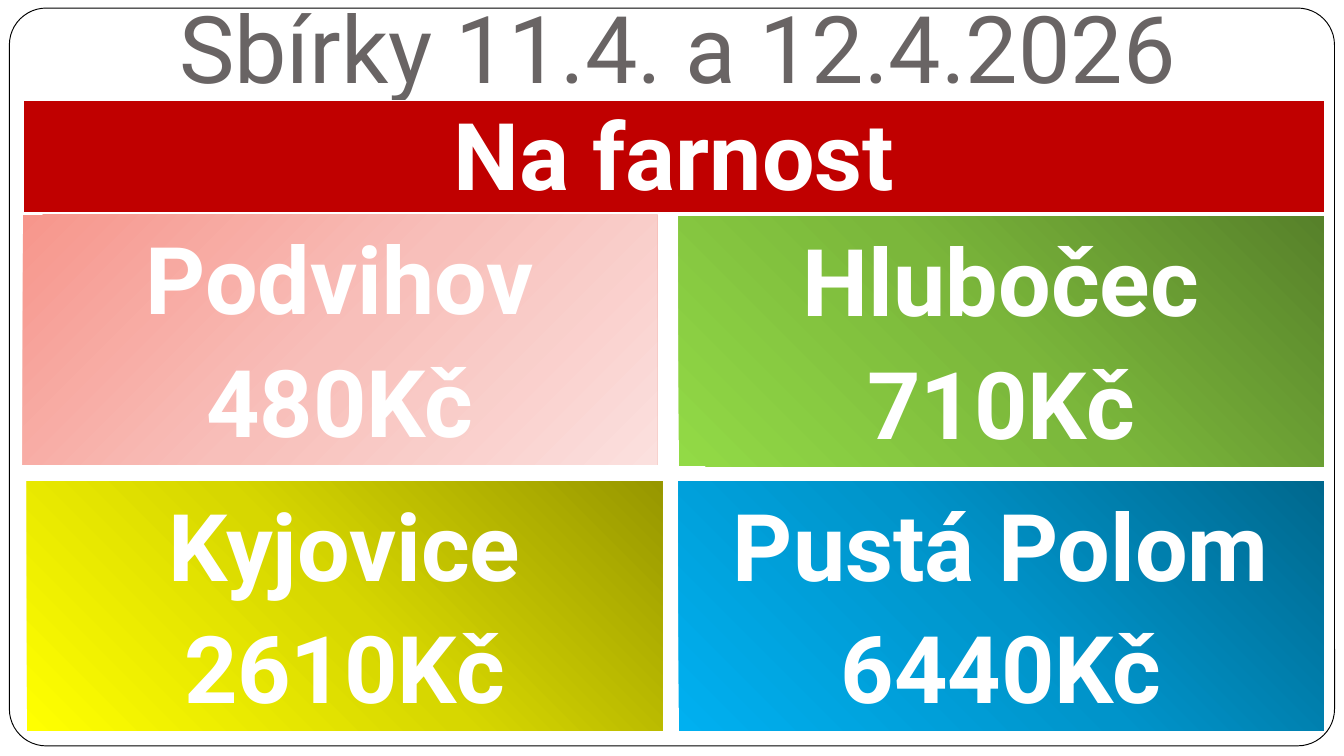
from dataclasses import dataclass

import pptx
import pptx.dml.color
import pptx.enum.shapes
import pptx.enum.text
import pptx.oxml
import pptx.oxml.ns
import pptx.util

Inches = pptx.util.Inches
Pt = pptx.util.Pt
Anchor = pptx.enum.text.MSO_ANCHOR
ShapeType = pptx.enum.shapes.MSO_SHAPE

COLORS = {"white": "FFFFFF", "black": "000000", "title": "696464", "banner": "C00000"}
RADIAL = '<a:path path="circle"><a:fillToRect l="100000" b="100000"/></a:path>'
DIAGONAL = '<a:lin ang="2700000" scaled="0"/>'


@dataclass
class Tile:
    village: str
    amount: str
    box: tuple[float, float, float, float]
    stops: tuple[str, str, str]
    direction: str = RADIAL


TILES = [
    Tile("Podvihov", "480Kč", (0.17, 1.6, 4.72, 1.86),
         ("F7968C", "F8BFBA", "FBE0DE"), DIAGONAL),
    Tile("Hlubočec", "710Kč", (5.05, 1.61, 4.8, 1.86), ("57812A", "7BB73B", "92DA46")),
    Tile("Kyjovice", "2610Kč", (0.2, 3.58, 4.73, 1.86), ("979700", "D7D700", "FFFF00")),
    Tile("Pustá Polom", "6440Kč", (5.05, 3.58, 4.8, 1.86), ("00688E", "0094CA", "00B0F0")),
]


def color(name: str) -> pptx.dml.color.RGBColor:
    return pptx.dml.color.RGBColor.from_string(COLORS[name])


def add_box(slide, kind, box, fill: str | None = None, line: str | None = None,
            line_width: float = 0.75):
    shape = slide.shapes.add_shape(kind, *map(Inches, box))
    shape.shadow.inherit = False
    if fill:
        shape.fill.solid()
        shape.fill.fore_color.rgb = color(fill)
    if line:
        shape.line.color.rgb = color(line)
        shape.line.width = Pt(line_width)
    else:
        shape.line.fill.background()
    return shape


def set_gradient(shape, stops: tuple[str, str, str], direction: str) -> None:
    shape.fill.gradient()
    old = shape._element.spPr.find(pptx.oxml.ns.qn("a:gradFill"))
    stop_xml = "".join(
        f'<a:gs pos="{index * 50000}"><a:srgbClr val="{stop}"/></a:gs>'
        for index, stop in enumerate(stops))
    gradient = pptx.oxml.parse_xml(
        f'<a:gradFill {pptx.oxml.ns.nsdecls("a")} rotWithShape="1">'
        f"<a:gsLst>{stop_xml}</a:gsLst>{direction}</a:gradFill>")
    old.getparent().replace(old, gradient)


def write_text(shape, *lines: str, font_color: str = "white", bold: bool = True,
               anchor=Anchor.MIDDLE, bottom: float = 0.1,
               space_before: float = 0) -> None:
    frame = shape.text_frame
    frame.word_wrap = True
    frame.vertical_anchor = anchor
    frame.margin_left = frame.margin_right = Inches(0.1)
    frame.margin_top, frame.margin_bottom = Inches(0.05), Inches(bottom)
    for index, line in enumerate(lines):
        paragraph = frame.add_paragraph() if index else frame.paragraphs[0]
        paragraph.alignment = pptx.enum.text.PP_ALIGN.CENTER
        if index and space_before:
            paragraph.space_before = Pt(space_before)
        run = paragraph.add_run()
        run.text = line
        run.font.name = "Roboto"
        run.font.size = Pt(50)
        run.font.bold = bold
        run.font.color.rgb = color(font_color)


def add_tile(slide, tile: Tile) -> None:
    shape = add_box(slide, ShapeType.RECTANGLE, tile.box)
    set_gradient(shape, tile.stops, tile.direction)
    write_text(shape, tile.village, tile.amount, anchor=Anchor.TOP,
               bottom=0.05, space_before=5.8)


def main() -> None:
    # Widescreen 16:9 page
    presentation = pptx.Presentation()
    presentation.slide_width = Inches(10)
    presentation.slide_height = Inches(10 * 9 / 16)
    slide = presentation.slides.add_slide(presentation.slide_layouts[6])

    # Rounded frame
    frame = add_box(slide, ShapeType.ROUNDED_RECTANGLE, (0.07, 0.06, 9.86, 5.49),
                    fill="white", line="black", line_width=0.5)
    frame.adjustments[0] = 0.05

    # Title
    title = slide.shapes.add_textbox(*map(Inches, (0.2, 0, 9.69, 0.86)))
    write_text(title, "Sbírky 11.4. a 12.4.2026", font_color="title", bold=False,
               anchor=Anchor.BOTTOM)

    # Collections by village
    for tile in TILES:
        add_tile(slide, tile)

    # Banner
    banner = add_box(slide, ShapeType.RECTANGLE, (0.17, 0.75, 9.69, 0.83),
                     fill="banner", line="white")
    write_text(banner, "Na farnost")

    presentation.save("out.pptx")


if __name__ == "__main__":
    main()
